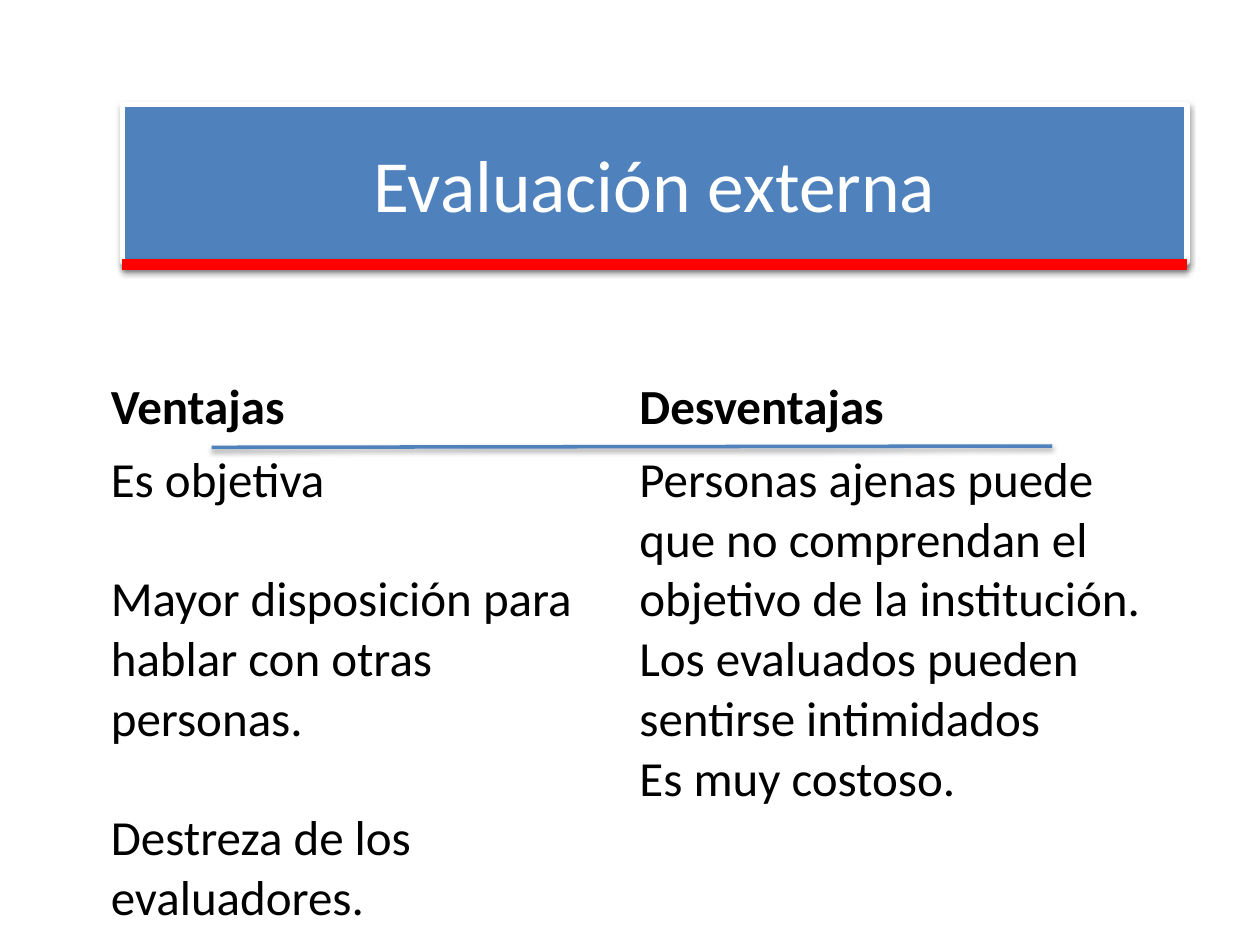
"""Build a slide on the pros and cons of external evaluation."""
from lxml import etree
from pptx import Presentation, util as u
from pptx.dml.color import RGBColor
from pptx.enum import shapes, text
from pptx.oxml import ns

TITLE = "Evaluación externa"
COLS = [
    ("Ventajas", 34, [
        "Es objetiva",
        "Mayor disposición para hablar con otras personas.",
        "Destreza de los evaluadores.",
    ]),
    ("Desventajas", 0, [
        "Personas ajenas puede que no comprendan el objetivo de la institución.",
        "Los evaluados pueden sentirse intimidados",
        "Es muy costoso.",
    ]),
]
BLUE = RGBColor(0x4F, 0x81, 0xBD)
RED = RGBColor(0xFF, 0, 0)
WHITE = RGBColor(0xFF, 0xFF, 0xFF)
BLACK = RGBColor(0, 0, 0)
LEFT, RIGHT = 0.97, 9.42
ROWS = [0.57, 3.9]


def shade(shape):
    props = shape._element.spPr
    for old in props.findall(ns.qn("a:effectLst")):
        props.remove(old)
    fx = etree.SubElement(props, ns.qn("a:effectLst"))
    drop = etree.SubElement(fx, ns.qn("a:outerShdw"), blurRad="40000",
                            dist="20000", dir="5400000", rotWithShape="0")
    tint = etree.SubElement(drop, ns.qn("a:srgbClr"), val="000000")
    etree.SubElement(tint, ns.qn("a:alpha"), val="38000")


def style(para, size, color, bold=False):
    font = para.font
    font.name, font.size, font.bold = "Calibri", u.Pt(size), bold
    font.color.rgb = color


def rule(slide, start, end, color, width):
    line = slide.shapes.add_connector(
        shapes.MSO_CONNECTOR.STRAIGHT, *map(u.Inches, start + end))
    line.line.color.rgb = color
    line.line.width = u.Pt(width)
    shade(line)


def banner(slide):
    box = slide.shapes.add_shape(
        shapes.MSO_SHAPE.RECTANGLE,
        *map(u.Inches, (LEFT, 0.83, RIGHT - LEFT, 1.25)))
    box.fill.solid()
    box.fill.fore_color.rgb = BLUE
    box.line.color.rgb = WHITE
    box.line.width = u.Pt(3)
    shade(box)
    frame = box.text_frame
    frame.text = TITLE
    frame.vertical_anchor = text.MSO_ANCHOR.MIDDLE
    para = frame.paragraphs[0]
    para.alignment = text.PP_ALIGN.CENTER
    style(para, 42, WHITE)


def grid(slide):
    table = slide.shapes.add_table(
        len(ROWS), len(COLS),
        *map(u.Inches, (0.78, 2.95, 8.39, sum(ROWS)))).table
    table.first_row = table.horz_banding = False
    for row, high in zip(table.rows, ROWS):
        row.height = u.Inches(high)
    for col, (head, gap, items) in enumerate(COLS):
        for row, lines in enumerate(([head], items)):
            cell = table.cell(row, col)
            cell.fill.background()
            cell.text_frame.text = "\n".join(lines)
            for num, para in enumerate(cell.text_frame.paragraphs):
                style(para, 28, BLACK, row == 0)
                if num and gap:
                    para.space_before = u.Pt(gap)


def main():
    deck = Presentation()
    deck.slide_width, deck.slide_height = u.Inches(10), u.Inches(7.5)
    slide = deck.slides.add_slide(deck.slide_layouts[6])
    banner(slide)
    rule(slide, (LEFT, 2.1), (RIGHT, 2.1), RED, 6)
    grid(slide)
    rule(slide, (1.68, 3.55), (8.35, 3.54), BLUE, 2)
    deck.save("out.pptx")


if __name__ == "__main__":
    main()
